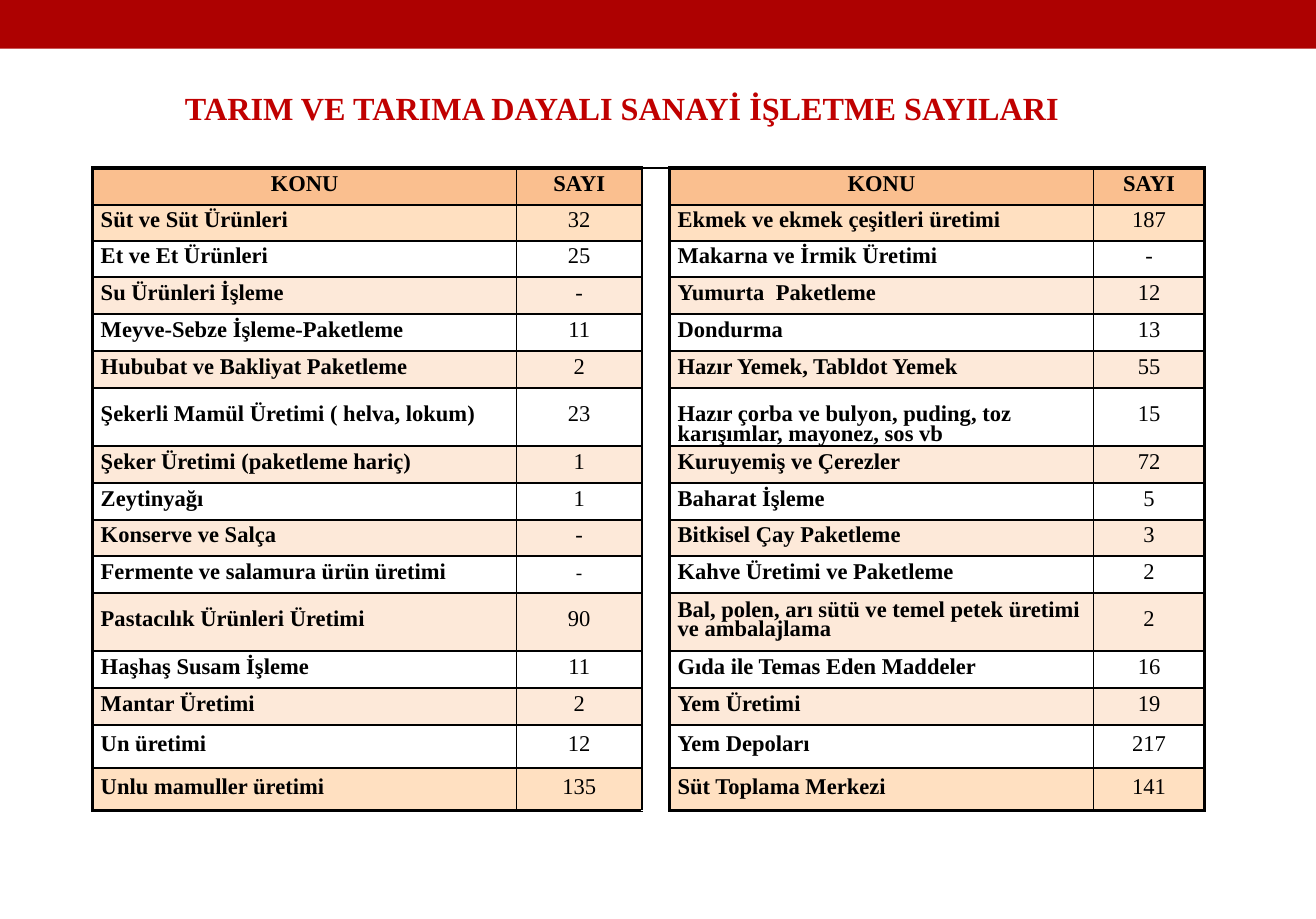
"""Builds a slide listing the number of agricultural and food businesses by subject."""
from lxml.etree import SubElement
from pptx import Presentation
from pptx.dml.color import RGBColor
from pptx.enum.shapes import MSO_SHAPE
from pptx.enum.text import MSO_ANCHOR, MSO_AUTO_SIZE, PP_ALIGN
from pptx.oxml.ns import qn
from pptx.util import Inches, Pt

BLACK = RGBColor(0x00, 0x00, 0x00)
BANNER_RED = RGBColor(0xAD, 0x01, 0x01)
TITLE_RED = RGBColor(0xC0, 0x00, 0x00)
ORANGE = RGBColor(0xFA, 0xBF, 0x8F)
PEACH = RGBColor(0xFF, 0xE0, 0xC1)
PALE = RGBColor(0xFD, 0xE9, 0xD9)

FONT = "Times New Roman"
GAP = 2
SUBJECTS = (0, 3)
COLUMN_WIDTHS = (3.66, 1.08, 0.24, 3.66, 0.96)
ROW_HEIGHTS = (0.32, 0.31, 0.31, 0.32, 0.32, 0.32, 0.5, 0.32,
               0.32, 0.31, 0.32, 0.5, 0.32, 0.32, 0.37, 0.37)
VERTICAL_LINES = (2.25, 1, 1.5, 1.5, 1, 2.25)
ROWS = (
    ("KONU", "SAYI", "KONU", "SAYI"),
    ("Süt ve Süt Ürünleri", "32", "Ekmek ve ekmek çeşitleri üretimi", "187"),
    ("Et ve Et Ürünleri", "25", "Makarna ve İrmik Üretimi", "-"),
    ("Su Ürünleri İşleme", "-", "Yumurta  Paketleme", "12"),
    ("Meyve-Sebze İşleme-Paketleme", "11", "Dondurma", "13"),
    ("Hububat ve Bakliyat Paketleme", "2", "Hazır Yemek, Tabldot Yemek", "55"),
    ("Şekerli Mamül Üretimi ( helva, lokum)", "23",
     "Hazır çorba ve bulyon, puding, toz karışımlar, mayonez, sos vb", "15"),
    ("Şeker Üretimi (paketleme hariç)", "1", "Kuruyemiş ve Çerezler", "72"),
    ("Zeytinyağı", "1", "Baharat İşleme", "5"),
    ("Konserve ve Salça", "-", "Bitkisel Çay Paketleme", "3"),
    ("Fermente ve salamura ürün üretimi", "-", "Kahve Üretimi ve Paketleme", "2"),
    ("Pastacılık Ürünleri Üretimi", "90",
     "Bal, polen, arı sütü ve temel petek üretimi ve ambalajlama", "2"),
    ("Haşhaş Susam İşleme", "11", "Gıda ile Temas Eden Maddeler", "16"),
    ("Mantar Üretimi", "2", "Yem Üretimi", "19"),
    ("Un üretimi", "12", "Yem Depoları", "217"),
    ("Unlu mamuller üretimi", "135", "Süt Toplama Merkezi", "141"),
)
LAST = len(ROWS) - 1


def add_border(cell, side, points):
    """Draw one black side of a cell."""
    line = SubElement(cell._tc.get_or_add_tcPr(), qn(f"a:ln{side}"), w=str(Pt(points)))
    fill = SubElement(line, qn("a:solidFill"))
    SubElement(fill, qn("a:srgbClr"), val=str(BLACK))


def style_text(paragraph, size, color, bold):
    """Format every run of a paragraph."""
    for run in paragraph.runs:
        run.font.name = FONT
        run.font.size = Pt(size)
        run.font.bold = bold
        run.font.color.rgb = color


presentation = Presentation()
presentation.slide_width = Inches(11.36)
presentation.slide_height = Inches(7.93)
slide = presentation.slides.add_slide(presentation.slide_layouts[6])

banner = slide.shapes.add_shape(
    MSO_SHAPE.RECTANGLE, 0, 0, presentation.slide_width, Inches(0.42))
banner.shadow.inherit = False
banner.fill.solid()
banner.fill.fore_color.rgb = BANNER_RED
banner.line.fill.background()

title = slide.shapes.add_textbox(Inches(1.46), Inches(0.71), Inches(7.82), Inches(0.44))
title.text_frame.word_wrap = False
title.text_frame.auto_size = MSO_AUTO_SIZE.SHAPE_TO_FIT_TEXT
title.text_frame.text = "TARIM VE TARIMA DAYALI SANAYİ İŞLETME SAYILARI"
title_paragraph = title.text_frame.paragraphs[0]
title_paragraph.alignment = PP_ALIGN.CENTER
title_paragraph.space_before = Pt(12)
style_text(title_paragraph, 20, TITLE_RED, True)

table = slide.shapes.add_table(
    len(ROWS), len(COLUMN_WIDTHS), Inches(0.8), Inches(1.45),
    Inches(sum(COLUMN_WIDTHS)), Inches(sum(ROW_HEIGHTS))).table
table.first_row = False
table.horz_banding = False
for column, width in zip(table.columns, COLUMN_WIDTHS):
    column.width = Inches(width)
for row, height in zip(table.rows, ROW_HEIGHTS):
    row.height = Inches(height)
table.cell(0, GAP).merge(table.cell(LAST, GAP))

for row_index, (left_subject, left_count, right_subject, right_count) in enumerate(ROWS):
    texts = (left_subject, left_count, "", right_subject, right_count)
    is_header = row_index == 0
    for column_index, text in enumerate(texts):
        cell = table.cell(row_index, column_index)
        is_gap = column_index == GAP
        is_subject = column_index in SUBJECTS
        cell.margin_left = cell.margin_right = Inches(0 if is_gap else 0.07)
        cell.margin_top = cell.margin_bottom = 0
        cell.vertical_anchor = MSO_ANCHOR.MIDDLE

        add_border(cell, "L", VERTICAL_LINES[column_index])
        add_border(cell, "R", VERTICAL_LINES[column_index + 1])
        if not is_gap:
            add_border(cell, "T", 2.25 if is_header else 1)
            add_border(cell, "B", 2.25 if row_index == LAST else 1)
        elif is_header:
            add_border(cell, "T", 1.5)

        if is_gap or (row_index % 2 == 0 and not is_header):
            cell.fill.background()
        else:
            cell.fill.solid()
            cell.fill.fore_color.rgb = (
                ORANGE if is_header else PEACH if row_index in (1, LAST) else PALE)

        if not is_gap:
            cell.text_frame.text = text
            paragraph = cell.text_frame.paragraphs[0]
            paragraph.line_spacing = Pt(12)
            paragraph.alignment = (
                PP_ALIGN.LEFT if is_subject and not is_header else PP_ALIGN.CENTER)
            style_text(paragraph, 14, BLACK, is_subject or is_header)

table.cell(6, 3).vertical_anchor = MSO_ANCHOR.BOTTOM
table.cell(10, 1).text_frame.paragraphs[0].runs[0].font.size = Pt(12)

presentation.save("out.pptx")
